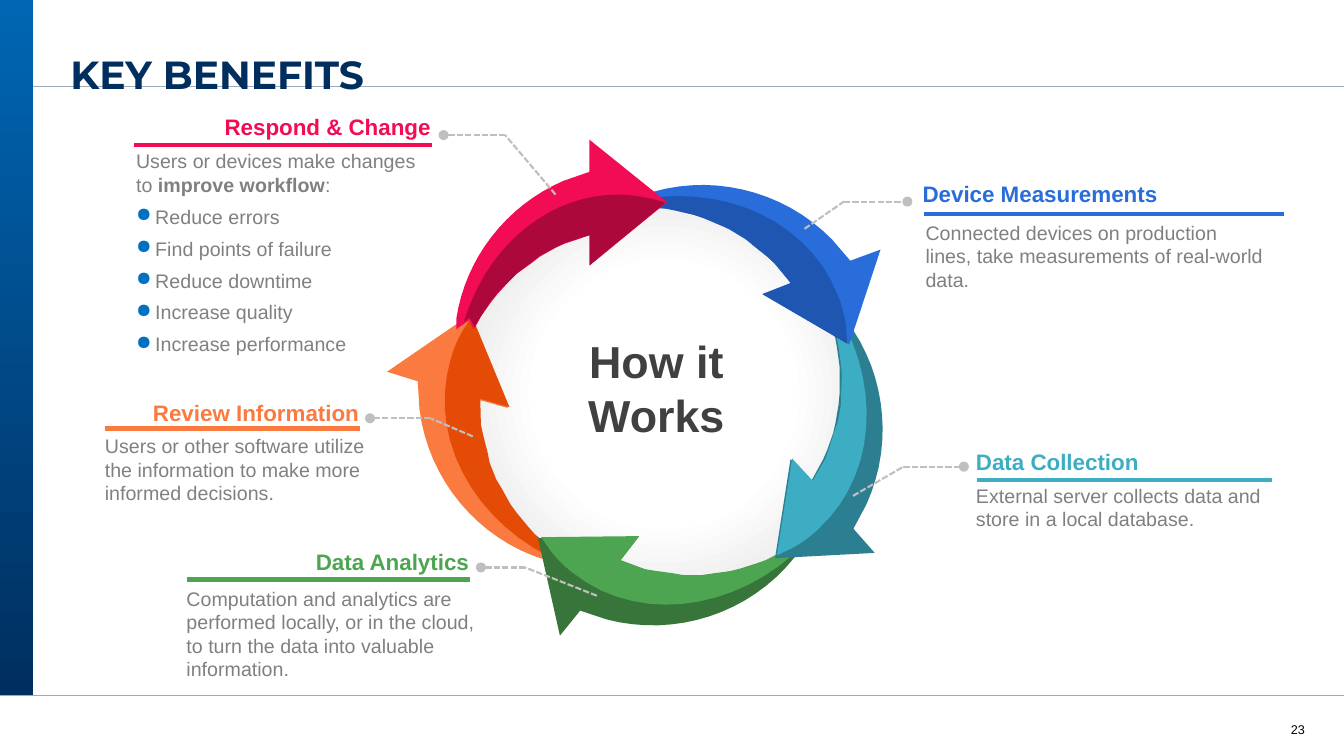
from dataclasses import dataclass
from math import cos, radians, sin

from lxml.etree import SubElement
from pptx import Presentation
from pptx.dml.color import RGBColor
from pptx.enum.dml import MSO_LINE
from pptx.enum.shapes import MSO_CONNECTOR, MSO_SHAPE
from pptx.enum.text import MSO_ANCHOR, PP_ALIGN
from pptx.oxml.ns import qn
from pptx.util import Inches, Pt


@dataclass(frozen=True)
class Theme:
    font: str = "Arial"
    title_font: str = "Montserrat"
    title_size: int = 28
    center_size: int = 32
    heading_size: int = 16
    body_size: int = 14
    number_size: int = 9
    navy: str = "002E5E"
    bar_top: str = "0066B3"
    bar_bottom: str = "002F5F"
    frame: str = "9EACB5"
    body: str = "808080"
    center: str = "404040"
    leader: str = "BFBFBF"
    bullet: str = "0070C0"
    white: str = "FFFFFF"
    disc_edge: str = "D9D9D9"
    black: str = "000000"
    red: str = "F20C53"
    red_dark: str = "AC083B"
    blue: str = "296DDB"
    blue_dark: str = "1E56B2"
    teal: str = "3DADC3"
    teal_dark: str = "2C7F90"
    green: str = "4DA551"
    green_dark: str = "37753A"
    orange: str = "FA7A40"
    orange_dark: str = "E44B06"


# Outlines: two numbers are a corner, six are a Bezier curve
LONG_ARROW = [
    (5.98, 2.09), (6.23, 1.99), (6.34, 1.95), (7.01, 1.7, 7.76, 1.88, 8.25, 2.38),
    (8.43, 2.59), (8.73, 2.48), (8.42, 3.42), (7.56, 2.92), (7.84, 2.81), (7.68, 2.62),
    (7.61, 2.55), (7.47, 2.43), (7.38, 2.37), (7.23, 2.28), (7.13, 2.23), (6.98, 2.17),
    (6.87, 2.13), (6.7, 2.09), (6.6, 2.07), (6.41, 2.06), (6.28, 2.06), (6.05, 2.09), (5.99, 2.11)]
LONG_FOLD = [
    (5.98, 2.08), (6.95, 1.72, 7.99, 2.1, 8.31, 2.94), (8.35, 3.04, 8.38, 3.15, 8.39, 3.26),
    (8.4, 3.41), (7.56, 2.92), (7.84, 2.81), (7.68, 2.61), (7.61, 2.55), (7.46, 2.43),
    (7.38, 2.36), (7.23, 2.27), (7.13, 2.23), (6.97, 2.16), (6.87, 2.13), (6.7, 2.09),
    (6.6, 2.07), (6.41, 2.06), (6.28, 2.06), (6.05, 2.09), (5.99, 2.1)]
RED_ARROW = [
    (5.85, 1.38), (6.62, 2), (5.85, 2.63), (5.85, 2.33), (5.61, 2.41), (5.52, 2.45),
    (5.36, 2.54), (5.27, 2.61), (5.13, 2.71), (5.05, 2.79), (4.94, 2.91), (4.87, 3),
    (4.77, 3.14), (4.72, 3.23), (4.7, 3.26), (4.66, 3.17), (4.53, 3.26), (4.53, 3.16),
    (4.62, 2.56, 5.02, 2.04, 5.59, 1.79), (5.85, 1.7)]
RED_FOLD = [
    (6.13, 1.93), (6.24, 1.93, 6.35, 1.95, 6.46, 1.97), (6.6, 2.01), (5.85, 2.63),
    (5.85, 2.33), (5.6, 2.41), (5.52, 2.45), (5.35, 2.54), (5.26, 2.61), (5.13, 2.71),
    (5.05, 2.79), (4.93, 2.91), (4.86, 3), (4.77, 3.14), (4.72, 3.23), (4.71, 3.25),
    (4.66, 3.15), (4.6, 3.19), (4.64, 3.08), (4.88, 2.41, 5.46, 1.93, 6.13, 1.93)]
BLUE_TURN, RED_TURN = 339.3, 270
ARROW_CENTER, FOLD_CENTER = (7.5, 2.65), (7.23, 2.74)
RED_CENTER, RED_FOLD_CENTER = (5.57, 2.32), (5.6, 2.59)


def flatten(outline, steps=16):
    """Turn every curve of an outline into short straight steps."""
    points = []
    for part in outline:
        if len(part) == 2:
            points.append(part)
            continue
        knots = [points[-1], part[:2], part[2:4], part[4:]]
        for step in range(1, steps + 1):
            t = step / steps
            weights = ((1 - t) ** 3, 3 * t * (1 - t) ** 2, 3 * t * t * (1 - t), t ** 3)
            points.append(tuple(sum(w * knot[axis] for w, knot in zip(weights, knots)) for axis in (0, 1)))
    return points


class SlideBuilder:
    def __init__(self, page, theme):
        self.page, self.theme = page, theme

    def line(self, start, end, color, width, dash=None):
        ends = [Inches(value) for value in (*start, *end)]
        line = self.page.shapes.add_connector(MSO_CONNECTOR.STRAIGHT, *ends)
        line.line.color.rgb = RGBColor.from_string(color)
        line.line.width = Pt(width)
        if dash:
            line.line.dash_style = dash
        SubElement(line._element.spPr, qn("a:effectLst"))

    def paint(self, shape, color):
        shape.shadow.inherit = False
        shape.line.fill.background()
        shape.fill.solid()
        shape.fill.fore_color.rgb = RGBColor.from_string(color)

    def shape(self, kind, at, color):
        shape = self.page.shapes.add_shape(kind, *map(Inches, at))
        self.paint(shape, color)
        return shape

    def gradient(self, shape, stops, radial=False):
        shape.fill.gradient()
        shape.fill.gradient_angle = 270
        for stop, (position, color) in zip(shape.fill.gradient_stops, stops):
            stop.position = position
            stop.color.rgb = RGBColor.from_string(color)
        if radial:
            fill = shape._element.spPr.find(qn("a:gradFill"))
            fill.remove(fill.find(qn("a:lin")))
            circle = SubElement(fill, qn("a:path"), path="circle")
            SubElement(circle, qn("a:fillToRect"), l="50000", t="50000", r="50000", b="50000")

    def arrow(self, outline, drawn_turn, drawn_center, turn, center, color):
        """Draw an outline upright around its center, then rotate the shape."""
        angle = radians(-drawn_turn)
        points = []
        for x, y in flatten(outline):
            dx, dy = x - drawn_center[0], y - drawn_center[1]
            points.append((Inches(center[0] + dx * cos(angle) - dy * sin(angle)),
                           Inches(center[1] + dx * sin(angle) + dy * cos(angle))))
        builder = self.page.shapes.build_freeform(*points[0], scale=1.0)
        builder.add_line_segments(points[1:], close=True)
        shape = builder.convert_to_shape()
        shape.rotation = turn
        self.paint(shape, color)

    def text(self, at, paragraphs, size, color, bold=False, align=PP_ALIGN.LEFT, font=None,
             left_inset=0.0, anchor=MSO_ANCHOR.TOP, spacing=None, after=6):
        """Each paragraph is a string, a list of (text, bold) spans, or a '●' item."""
        box = self.page.shapes.add_textbox(*map(Inches, at))
        frame = box.text_frame
        frame.word_wrap, frame.vertical_anchor = True, anchor
        frame.margin_left = Inches(left_inset)
        for index, content in enumerate(paragraphs):
            para = frame.paragraphs[0] if index == 0 else frame.add_paragraph()
            spans = [(content, None)] if isinstance(content, str) else content
            if spans[0][0].startswith("●"):
                spans = [(spans[0][0][1:], None)]
                self.bullet(para)
            for words, strong in spans:
                span = para.add_run()
                span.text = words
                if strong:
                    span.font.bold = True
            para.alignment, para.space_after = align, Pt(after)
            if spacing:
                para.line_spacing = Pt(spacing)
            para.font.name, para.font.size = font or self.theme.font, Pt(size)
            para.font.bold = bold
            para.font.color.rgb = RGBColor.from_string(color)

    def bullet(self, para):
        props = para._p.get_or_add_pPr()
        props.set("marL", str(Inches(0.19)))
        props.set("indent", str(-Inches(0.19)))
        SubElement(SubElement(props, qn("a:buClr")), qn("a:srgbClr"), val=self.theme.bullet)
        SubElement(props, qn("a:buChar"), char="●")

    def callout(self, color, heading, heading_at, align, rule, body, body_at, dot, elbow, target):
        theme, (x, y) = self.theme, dot
        for start, end in ((target, (elbow, y)), ((elbow, y), dot)):
            self.line(start, end, theme.leader, 1.5, MSO_LINE.SQUARE_DOT)
        self.shape(MSO_SHAPE.OVAL, (x - 0.05, y - 0.05, 0.1, 0.1), theme.leader)
        self.text(heading_at, [heading], theme.heading_size, color, True, align)
        self.text(body_at, body, theme.body_size, theme.body)
        left, right, level = rule
        self.line((left, level), (right, level), color, 3)


def main():
    deck = Presentation()
    deck.slide_width, deck.slide_height = Inches(13.33), Inches(7.5)
    theme = Theme()
    slide = SlideBuilder(deck.slides.add_slide(deck.slide_layouts[6]), theme)
    left, right, center = PP_ALIGN.LEFT, PP_ALIGN.RIGHT, PP_ALIGN.CENTER

    # Frame, page number and title
    for level in (6.9, 0.86):
        slide.line((0, level), (13.33, level), theme.frame, 0.5)
    slide.text((10.04, 7.11, 3, 0.25), ["23"], theme.number_size, theme.black, align=right,
               anchor=MSO_ANCHOR.MIDDLE, after=0)
    bar = slide.shape(MSO_SHAPE.RECTANGLE, (0, 0, 0.33, 6.9), theme.bar_top)
    slide.gradient(bar, [(0, theme.bar_top), (1, theme.bar_bottom)])
    slide.text((0.6, 0.4, 11.35, 0.64), ["KEY BENEFITS"], theme.title_size, theme.navy, True,
               font=theme.title_font, left_inset=0.1, anchor=MSO_ANCHOR.MIDDLE, spacing=36, after=0)

    # Ring of arrows: one shape in four turns, then the shorter red one
    disc = slide.shape(MSO_SHAPE.OVAL, (4.6, 1.93, 3.97, 3.97), theme.white)
    slide.gradient(disc, [(0.45, theme.white), (1, theme.disc_edge)], radial=True)
    for turn, arrow_center, fold_center, arrow_color, fold_color in (
            (196.6, (4.93, 4.32), (5.2, 4.4), theme.orange, theme.orange_dark),
            (128.4, (6.54, 5.54), (6.72, 5.32), theme.green_dark, theme.green),
            (48, (8.08, 4.4), (7.91, 4.18), theme.teal_dark, theme.teal),
            (BLUE_TURN, ARROW_CENTER, FOLD_CENTER, theme.blue, theme.blue_dark)):
        slide.arrow(LONG_ARROW, BLUE_TURN, ARROW_CENTER, turn, arrow_center, arrow_color)
        slide.arrow(LONG_FOLD, BLUE_TURN, FOLD_CENTER, turn, fold_center, fold_color)
    slide.arrow(RED_ARROW, RED_TURN, RED_CENTER, RED_TURN, RED_CENTER, theme.red)
    slide.arrow(RED_FOLD, RED_TURN, RED_FOLD_CENTER, RED_TURN, RED_FOLD_CENTER, theme.red_dark)
    slide.text((5.26, 3.26, 2.6, 1.39), ["How it Works"], theme.center_size, theme.center, True, center)

    # Callouts
    slide.callout(
        theme.blue, "Device Measurements", (9.15, 1.74, 3.01, 0.5), left, (9.16, 12.73, 2.12),
        ["Connected devices on production lines, take measurements of real-world data."],
        (9.18, 2.14, 3.45, 1.13), (9, 2), 8.37, (7.98, 2.27))
    slide.callout(
        theme.teal, "Data Collection", (9.68, 4.4, 2.14, 0.42), left, (9.69, 12.62, 4.76),
        ["External server collects data and store in a local database."],
        (9.68, 4.75, 3.12, 0.9), (9.56, 4.63), 8.96, (8.46, 4.92))
    slide.callout(
        theme.green, "Data Analytics", (2.38, 5.39, 2.37, 0.39), right, (1.85, 4.66, 5.75),
        ["Computation and analytics are performed locally, or in the cloud, "
         "to turn the data into valuable information."],
        (1.85, 5.77, 2.96, 1.15), (4.77, 5.63), 5.21, (5.92, 5.91))
    slide.callout(
        theme.orange, "Review Information", (1.33, 3.91, 2.33, 0.56), right, (1.04, 3.57, 4.25),
        ["Users or other software utilize the information to make more informed decisions."],
        (1.04, 4.26, 2.79, 1.1), (3.67, 4.15), 4.27, (4.69, 4.33))
    slide.callout(
        theme.red, "Respond & Change", (1.72, 1.07, 2.65, 0.45), right, (1.33, 4.28, 1.44),
        [[("Users or devices make changes to ", False), ("improve workflow", True), (":", False)],
         "●Reduce errors", "●Find points of failure", "●Reduce downtime",
         "●Increase quality", "●Increase performance"],
        (1.35, 1.43, 2.94, 2.76), (4.4, 1.34), 5.01, (5.51, 1.93))

    deck.save("out.pptx")


if __name__ == "__main__":
    main()
